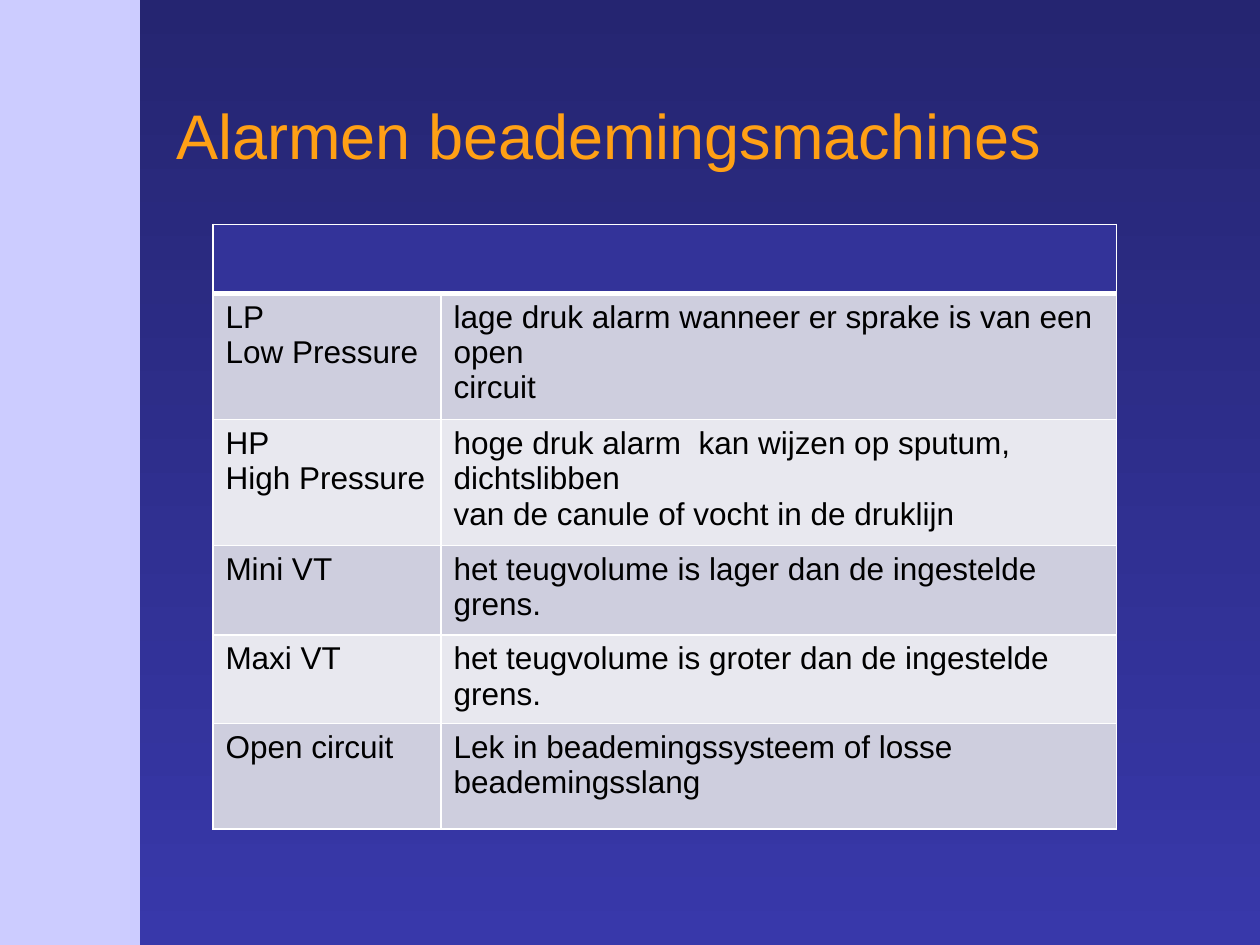
"""Build the slide on ventilator alarms: side band, title and alarm table."""
from lxml.etree import SubElement
from pptx import Presentation
from pptx.dml.color import RGBColor
from pptx.enum.shapes import MSO_SHAPE
from pptx.enum.text import MSO_ANCHOR
from pptx.oxml import parse_xml
from pptx.oxml.ns import nsdecls, qn
from pptx.util import Inches, Pt

TITLE = "Alarmen beademingsmachines"
ALARMS = [
    (["LP", "Low Pressure"],
     ["lage druk alarm wanneer er sprake is van een open", "circuit"]),
    (["HP", "High Pressure"],
     ["hoge druk alarm  kan wijzen op sputum, dichtslibben",
      "van de canule of vocht in de druklijn"]),
    (["Mini VT"], ["het teugvolume is lager dan de ingestelde grens."]),
    (["Maxi VT"], ["het teugvolume is groter dan de ingestelde grens."]),
    (["Open circuit"], ["Lek in beademingssysteem of losse beademingsslang"]),
]
COLUMN_WIDTHS = [1.81, 5.36]
ROW_HEIGHTS = [0.55, 0.79, 0.87, 0.71, 0.63, 0.84]

FONT = "Arial"
SKY_TOP = RGBColor(0x25, 0x25, 0x71)
SKY_BOTTOM = RGBColor(0x38, 0x38, 0xAA)
LAVENDER = RGBColor(0xCC, 0xCC, 0xFF)
ORANGE = RGBColor(0xFF, 0xA0, 0x15)
INDIGO = RGBColor(0x33, 0x33, 0x99)
BANDS = [RGBColor(0xCE, 0xCE, 0xDE), RGBColor(0xE8, 0xE8, 0xEF)]
BLACK = RGBColor(0, 0, 0)
WHITE = RGBColor(0xFF, 0xFF, 0xFF)


def style(paragraph, size, color):
    paragraph.font.name = FONT
    paragraph.font.size = Pt(size)
    paragraph.font.color.rgb = color


def paint_background(slide):
    fill = slide.background.fill
    fill.gradient()
    fill.gradient_angle = 270
    for stop, color, position in zip(fill.gradient_stops, (SKY_TOP, SKY_BOTTOM), (0, 1)):
        stop.color.rgb = color
        stop.position = position


def add_band(slide, height):
    band = slide.shapes.add_shape(MSO_SHAPE.RECTANGLE, 0, 0, Inches(1.11), height)
    band.shadow.inherit = False
    band.fill.solid()
    band.fill.fore_color.rgb = LAVENDER
    band.line.fill.background()


def add_title(slide):
    frame = slide.shapes.add_textbox(
        Inches(1.3), Inches(0.44), Inches(8.48), Inches(1.25)).text_frame
    frame.word_wrap = True
    frame.vertical_anchor = MSO_ANCHOR.MIDDLE
    heading = frame.paragraphs[0]
    run = heading.add_run()
    run.text = TITLE
    style(run, 36, ORANGE)
    run.font.fill._xPr.find(qn("a:solidFill")).addnext(parse_xml(
        f'<a:effectLst {nsdecls("a")}><a:outerShdw dist="38100" dir="2700000">'
        f'<a:srgbClr val="{BLACK}"/></a:outerShdw></a:effectLst>'))


def format_cell(cell, color, bottom=1):
    properties = cell._tc.get_or_add_tcPr()
    for side, width in (("L", 1), ("R", 1), ("T", 1), ("B", bottom)):
        line = SubElement(properties, qn(f"a:ln{side}"), w=str(Pt(width)))
        SubElement(SubElement(line, qn("a:solidFill")), qn("a:srgbClr"), val=str(WHITE))
    cell.fill.solid()
    cell.fill.fore_color.rgb = color


def add_alarm_table(slide):
    table = slide.shapes.add_table(
        len(ROW_HEIGHTS), len(COLUMN_WIDTHS), Inches(1.69), Inches(1.78),
        Inches(sum(COLUMN_WIDTHS)), Inches(sum(ROW_HEIGHTS))).table
    for column, width in zip(table.columns, COLUMN_WIDTHS):
        column.width = Inches(width)
    for row, height in zip(table.rows, ROW_HEIGHTS):
        row.height = Inches(height)

    table.cell(0, 0).merge(table.cell(0, 1))
    for header in table.rows[0].cells:
        format_cell(header, INDIGO, bottom=3)
    for r, alarm in enumerate(ALARMS, start=1):
        for c, lines in enumerate(alarm):
            cell = table.cell(r, c)
            format_cell(cell, BANDS[(r - 1) % 2])
            cell.text_frame.text = "\n".join(lines)
            for paragraph in cell.text_frame.paragraphs:
                style(paragraph, 18, BLACK)


def main():
    deck = Presentation()
    deck.slide_width, deck.slide_height = Inches(10), Inches(7.5)
    slide = deck.slides.add_slide(deck.slide_layouts[6])
    paint_background(slide)
    add_band(slide, deck.slide_height)
    add_title(slide)
    add_alarm_table(slide)
    deck.save("out.pptx")


if __name__ == "__main__":
    main()
